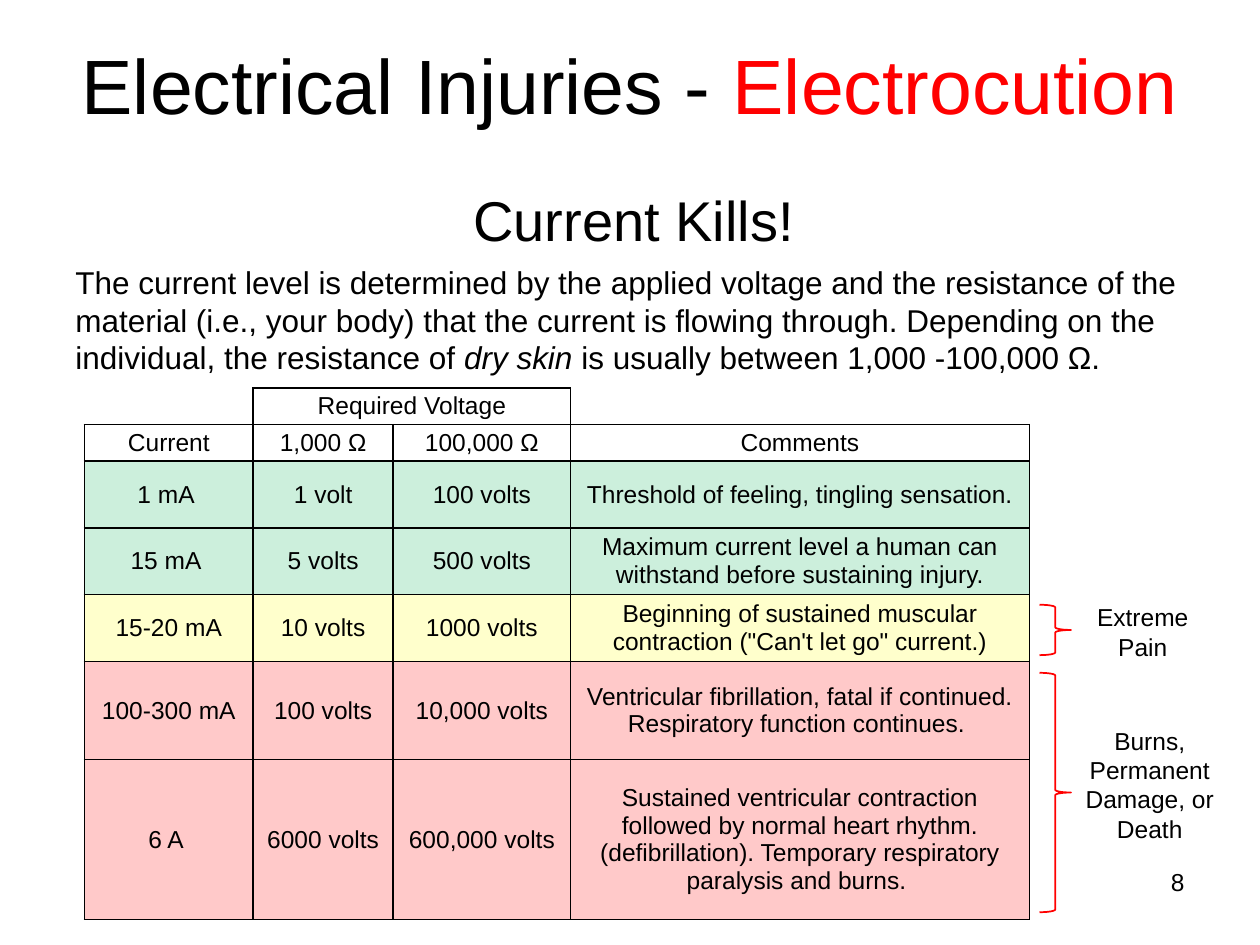
from pptx import Presentation
from pptx.dml.color import RGBColor
from pptx.enum.shapes import MSO_SHAPE
from pptx.enum.text import MSO_ANCHOR, PP_ALIGN
from pptx.oxml.ns import qn
from pptx.util import Inches, Pt
from lxml.etree import SubElement

FONT, BLACK, RED = "Arial", "000000", "FF0000"
GREEN, YELLOW = "00B050", "FFFF00"

TITLE = [("Electrical Injuries - ", {}), ("Electrocution", {"color": RED})]
EXPLANATION = [
    ("The current level is determined by the applied voltage and the resistance of the "
     "material (i.e., your body) that the current is flowing through. Depending on the "
     "individual, the resistance of ", {}),
    ("dry skin", {"italic": True}),
    (" is usually between 1,000 -100,000 Ω.", {}),
]

COL_WIDTHS = [1.34, 1.11, 1.41, 3.64]
# (height, fill, opacity in percent, cell texts)
ROWS = [
    (0.29, None, 0, ["", "Required Voltage", "", ""]),
    (0.29, None, 0, ["Current", "1,000 Ω", "100,000 Ω", "Comments"]),
    (0.53, GREEN, 20, ["1 mA ", "1 volt", "100 volts",
                       "Threshold of feeling, tingling sensation."]),
    (0.53, GREEN, 20, ["15 mA ", "5 volts", "500 volts",
                       "Maximum current level a human can withstand before sustaining injury."]),
    (0.53, YELLOW, 20, ["15-20 mA", "10 volts", "1000 volts",
                        "Beginning of sustained muscular contraction (\"Can't let go\" current.)"]),
    (0.78, RED, 21, ["100-300 mA", "100 volts", "10,000 volts",
                     "Ventricular fibrillation, fatal if continued. "
                     "Respiratory function continues. "]),
    (1.27, RED, 21, ["6 A ", "6000 volts", "600,000 volts",
                     "Sustained ventricular contraction followed by normal heart rhythm. "
                     "(defibrillation). Temporary respiratory paralysis and burns. "]),
]
CORNER_BORDERS = {0: "RB", 3: "LB"}  # open cells beside "Required Voltage"

BRACES = [(8.25, 4.8, 0.25, 0.4), (8.25, 5.34, 0.25, 1.9)]
LABELS = [("Extreme Pain", (8.57, 4.73, 1, 0.57)),
          ("Burns, Permanent Damage, or Death", (8.5, 5.71, 1.25, 1.03))]


def rgb(color):
    return RGBColor.from_string(color)


def write(p, runs, size, align=PP_ALIGN.LEFT):
    p.alignment = align
    for text, style in runs:
        r = p.add_run()
        r.text = text
        r.font.name, r.font.size = FONT, Pt(size)
        r.font.italic = style.get("italic")
        r.font.color.rgb = rgb(style.get("color", BLACK))


def add_text_frame(slide, box):
    tf = slide.shapes.add_textbox(*map(Inches, box)).text_frame
    tf.word_wrap = True
    return tf


def set_borders(cell, sides):
    """Draw the sides named in a string such as "LRTB" and clear the others."""
    tcPr = cell._tc.get_or_add_tcPr()
    for side in "LRTB":
        ln = SubElement(tcPr, qn(f"a:ln{side}"), w=str(Pt(1)))
        if side in sides:
            fill = SubElement(ln, qn("a:solidFill"))
            SubElement(fill, qn("a:srgbClr"), val=BLACK)
        else:
            SubElement(ln, qn("a:noFill"))


def set_fill(cell, color, opacity):
    if color is None:
        cell.fill.background()
        return
    cell.fill.solid()
    cell.fill.fore_color.rgb = rgb(color)
    clr = cell._tc.tcPr.find(f"{qn('a:solidFill')}/{qn('a:srgbClr')}")
    SubElement(clr, qn("a:alpha"), val=str(opacity * 1000))


def add_current_table(slide):
    height = sum(row[0] for row in ROWS)
    table = slide.shapes.add_table(
        len(ROWS), len(COL_WIDTHS), Inches(0.67), Inches(3.08),
        Inches(sum(COL_WIDTHS)), Inches(height)).table
    table.first_row = table.horz_banding = False
    for col, width in zip(table.columns, COL_WIDTHS):
        col.width = Inches(width)
    for i, (row_height, color, opacity, texts) in enumerate(ROWS):
        table.rows[i].height = Inches(row_height)
        for j, text in enumerate(texts):
            cell = table.cell(i, j)
            cell.margin_left = cell.margin_right = Inches(0.04)
            cell.margin_top = cell.margin_bottom = Inches(0.02)
            cell.vertical_anchor = MSO_ANCHOR.MIDDLE
            p = cell.text_frame.paragraphs[0]
            if text:
                write(p, [(text, {})], 14, PP_ALIGN.CENTER)
            else:
                SubElement(p._p, qn("a:endParaRPr"), sz="1400")
            set_borders(cell, CORNER_BORDERS.get(j, "LRTB") if i == 0 else "LRTB")
            set_fill(cell, color, opacity)
    table.cell(0, 1).merge(table.cell(0, 2))


def main():
    prs = Presentation()
    prs.slide_width, prs.slide_height = Inches(10), Inches(7.5)
    slide = prs.slides.add_slide(prs.slide_layouts[6])

    tf = add_text_frame(slide, (0, 0, 10, 1.33))
    tf.vertical_anchor = MSO_ANCHOR.MIDDLE
    write(tf.paragraphs[0], TITLE, 44, PP_ALIGN.CENTER)

    tf = add_text_frame(slide, (0.5, 1.42, 9, 1.67))
    p = tf.paragraphs[0]
    write(p, [("Current Kills!", {})], 32, PP_ALIGN.CENTER)
    p.space_after = Pt(6)
    pPr = p._p.get_or_add_pPr()
    pPr.set("marL", str(Inches(0.56)))
    pPr.set("indent", str(Inches(-0.5)))
    write(tf.add_paragraph(), EXPLANATION, 18)

    add_current_table(slide)

    for box in BRACES:
        s = slide.shapes.add_shape(MSO_SHAPE.RIGHT_BRACE, *map(Inches, box))
        s.shadow.inherit = False
        s.fill.background()
        s.line.color.rgb = rgb(RED)
        s.line.width = Pt(1)

    for text, box in LABELS:
        tf = add_text_frame(slide, box)
        write(tf.paragraphs[0], [(text, {})], 14, PP_ALIGN.CENTER)

    tf = add_text_frame(slide, (7.17, 6.83, 2.33, 0.52))
    write(tf.paragraphs[0], [("8", {})], 14, PP_ALIGN.RIGHT)

    prs.save("out.pptx")


if __name__ == "__main__":
    main()
